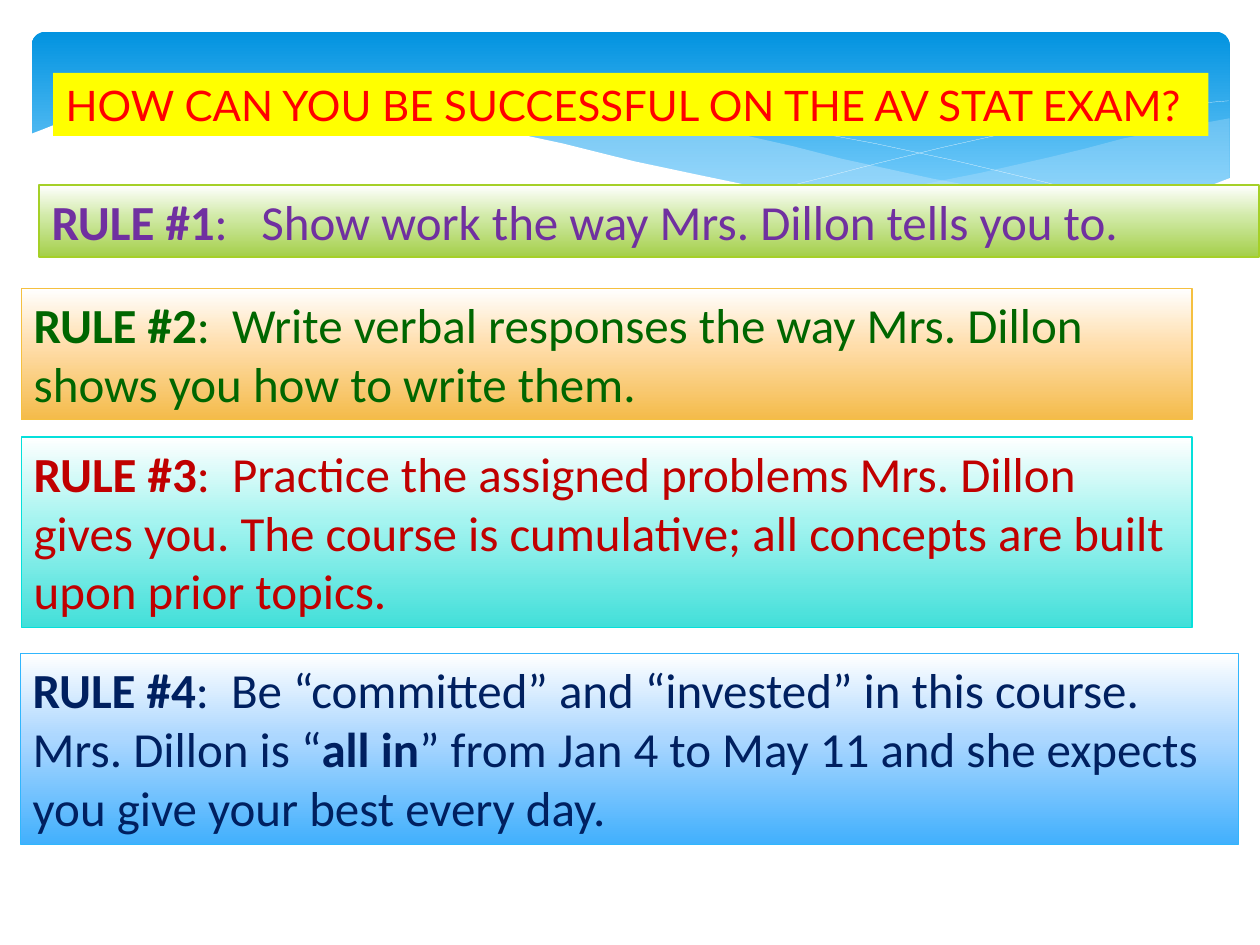
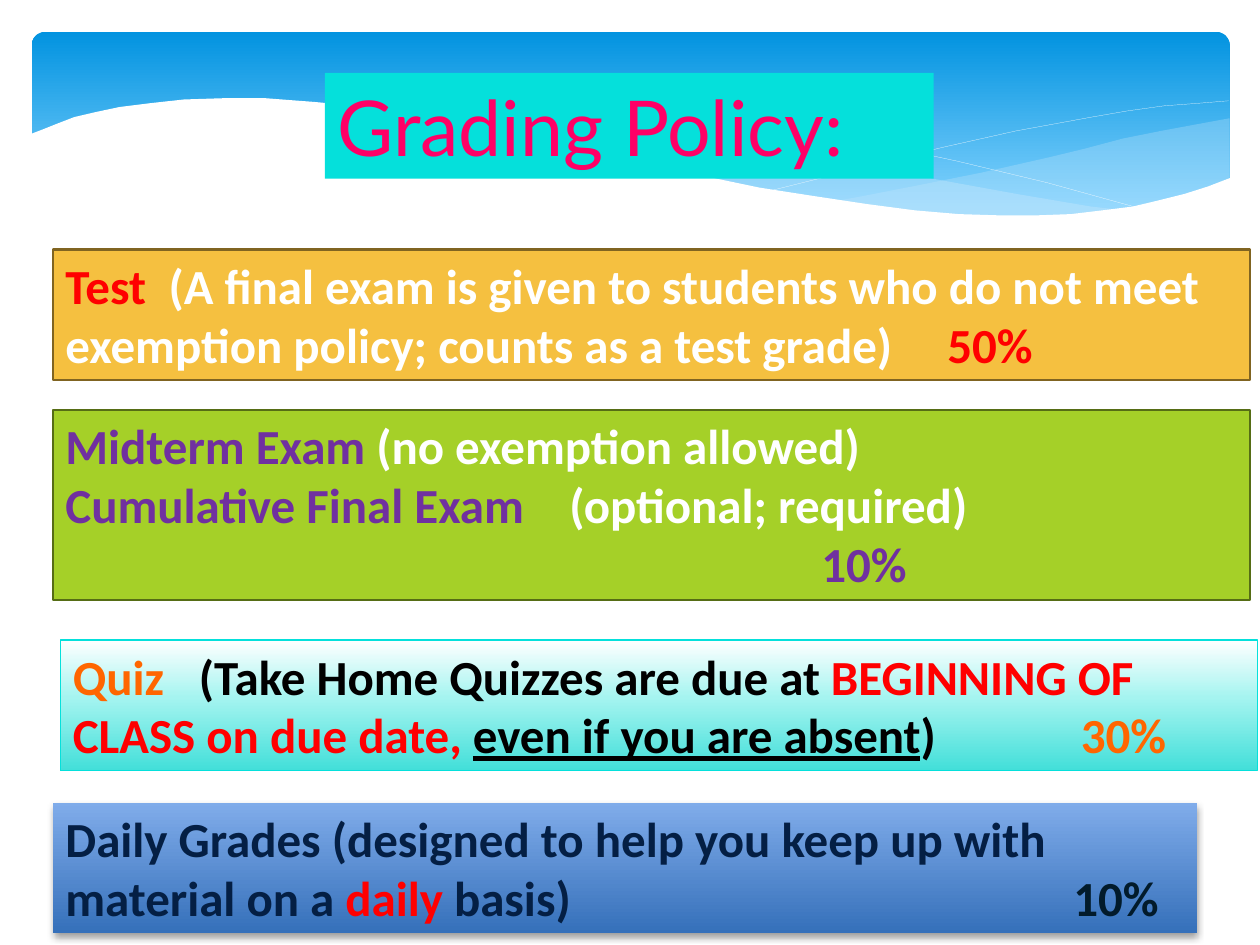
import copy

from lxml import etree
from pptx import Presentation
from pptx import util as u
from pptx.dml.color import RGBColor
from pptx.enum import shapes, text
from pptx.oxml import ns

WHITE = RGBColor(0xFF, 0xFF, 0xFF)
BLACK = RGBColor(0x00, 0x00, 0x00)
RED = RGBColor(0xFF, 0x00, 0x00)
DARK_RED = RGBColor(0xC0, 0x00, 0x00)
PINK = RGBColor(0xFF, 0x00, 0x66)
ORANGE = RGBColor(0xFF, 0x66, 0x00)
YELLOW = RGBColor(0xFF, 0xFF, 0x00)
PURPLE = RGBColor(0x70, 0x30, 0xA0)
DARK_GREEN = RGBColor(0x00, 0x66, 0x00)
NAVY = RGBColor(0x00, 0x20, 0x60)
DEEP_BLUE = RGBColor(0x04, 0x1F, 0x44)
INK = RGBColor(0x02, 0x1B, 0x2B)
LIME = RGBColor(0xA5, 0xD0, 0x28)
OLIVE = RGBColor(0x56, 0x6D, 0x15)
GOLD = RGBColor(0xF5, 0xC0, 0x40)
BROWN = RGBColor(0x80, 0x64, 0x21)
TURQUOISE = RGBColor(0x05, 0xE0, 0xDB)
SKY = RGBColor(0x31, 0xB6, 0xFD)
PALE_BLUE = RGBColor(0xC6, 0xE7, 0xFC)

# Gradients run from top to bottom: (position, colour)
BAND_GRADIENT = [(0, RGBColor(0x02, 0x93, 0xE0)), (0.9, RGBColor(0x83, 0xD3, 0xFE))]
LIME_GRADIENT = [(0, WHITE), (0.44, RGBColor(0xD1, 0xEA, 0xA7)), (1, RGBColor(0xA4, 0xCF, 0x4A))]
GOLD_GRADIENT = [(0, WHITE), (0.44, RGBColor(0xFF, 0xDD, 0xAA)), (1, RGBColor(0xF4, 0xBB, 0x4A))]
TURQUOISE_GRADIENT = [(0, WHITE), (0.44, RGBColor(0xA5, 0xF4, 0xF0)), (1, RGBColor(0x42, 0xDF, 0xD9))]
SKY_GRADIENT = [(0, WHITE), (0.44, RGBColor(0xAC, 0xD7, 0xFF)), (1, RGBColor(0x42, 0xB0, 0xFD))]
BLUE_GRADIENT = [(0, RGBColor(0x80, 0xAC, 0xEA)), (1, RGBColor(0x35, 0x70, 0xBA))]

BODY_FONT, TITLE_FONT = "Calibri", "Lato"
BODY_SIZE = u.Pt(28)

# Wave outlines, in hundredths of an inch
WAVE_UNIT = u.Cm(2.54) // 100
RIGHT_WAVE = [
    (975, 94), (948, 99), (921, 104), (891, 110), (861, 118), (832, 125), (779, 137),
    (729, 147), (683, 156), (661, 160), (691, 164), (719, 167), (745, 169), (769, 171),
    (792, 172), (835, 172), (863, 170), (889, 166), (913, 162), (935, 156), (963, 147),
    (976, 141), (976, 94)]
MIDDLE_WAVE = [
    (893, 167), (866, 164), (807, 154), (741, 142), (668, 126), (629, 116), (598, 109),
    (569, 102), (541, 97), (514, 92), (489, 89), (442, 83), (399, 80), (361, 80),
    (328, 81), (299, 84), (286, 86), (323, 90), (362, 97), (404, 106), (449, 116),
    (530, 135), (584, 146), (634, 156), (680, 163), (722, 168), (761, 171), (796, 173),
    (838, 172), (867, 170)]
FALLING_LINE = [
    (309, 90), (328, 86), (353, 84), (387, 82), (416, 81), (450, 82), (489, 84),
    (533, 88), (582, 94), (636, 103), (695, 114), (760, 128), (831, 145), (907, 166)]
RISING_LINE = [
    (613, 151), (653, 141), (695, 130), (748, 117), (806, 104), (866, 93), (895, 88),
    (924, 84), (951, 82), (975, 80)]
WHITE_WAVE = [
    (977, 141), (959, 148), (940, 154), (920, 159), (899, 164), (875, 167), (850, 170),
    (823, 171), (793, 171), (761, 170), (726, 167), (688, 162), (648, 156), (603, 149),
    (555, 139), (503, 128), (447, 114), (391, 102), (340, 92), (292, 85), (250, 81),
    (211, 78), (177, 78), (146, 79), (119, 82), (95, 85), (76, 89), (59, 93), (46, 98),
    (36, 102), (23, 107), (23, 224), (977, 224)]

# points, fill colour (None for an open line), opacity in percent
WAVES = [
    (RIGHT_WAVE, PALE_BLUE, 29),
    (MIDDLE_WAVE, PALE_BLUE, 40),
    (FALLING_LINE, None, 100),
    (RISING_LINE, None, 100),
    (WHITE_WAVE, WHITE, 100)]

# Box: position in cm, fill, outline (colour, points), tab stops in cm,
# paragraphs of runs (text, colour, style letters: b bold, u underlined)
RULE_BOXES = [
    ((0.79, 3.73, 24.59, 1.45), LIME_GRADIENT, (LIME, 0.75), [4.23], [
        [("RULE #1", PURPLE, "b"),
         (":\tShow work the way Mrs. Dillon tells you to.", PURPLE, "")]]),
    ((0.43, 5.82, 23.6, 2.64), GOLD_GRADIENT, (GOLD, 0.75), [4], [
        [("RULE #2", DARK_GREEN, "b"),
         (":\tWrite verbal responses the way Mrs. Dillon shows you how to write them.",
          DARK_GREEN, "")]]),
    ((0.43, 8.81, 23.6, 3.84), TURQUOISE_GRADIENT, (TURQUOISE, 0.75), [4], [
        [("RULE #3", DARK_RED, "b"),
         (":\tPractice the assigned problems Mrs. Dillon gives you. The course is "
          "cumulative; all concepts are built upon prior topics.", DARK_RED, "")]]),
    ((0.41, 13.18, 24.56, 3.84), SKY_GRADIENT, (SKY, 0.75), [4], [
        [("RULE #4", NAVY, "b"),
         (":\tBe “committed” and “invested” in this course. Mrs. Dillon is “", NAVY, ""),
         ("all in", NAVY, "b"),
         ("” from Jan 4 to May 11 and she expects you give your best every day.",
          NAVY, "")]])]

GRADE_BOXES = [
    ((1.07, 5.03, 24.13, 2.64), GOLD, (BROWN, 1.25), [2.08, 17.78], [
        [("Test", RED, "b"),
         ("\t(A final exam is given to students who do not meet exemption policy; "
          "counts as a test grade)\t", WHITE, "b"),
         ("50%", RED, "b")]]),
    ((1.07, 8.26, 24.13, 3.84), LIME, (OLIVE, 1.25), [10.16, 15.24], [
        [("Midterm Exam ", PURPLE, "b"), ("(no exemption allowed)", WHITE, "b")],
        [("Cumulative Final Exam", PURPLE, "b"),
         ("\t(optional; required)", WHITE, "b")],
        [("\t\t10%", PURPLE, "b")]]),
    ((1.22, 12.9, 24.13, 2.64), TURQUOISE_GRADIENT, (TURQUOISE, 0.75), [2.54, 20.32], [
        [("Quiz", ORANGE, "b"),
         ("\t(Take Home Quizzes are due at ", BLACK, "b"),
         ("BEGINNING OF CLASS on due date, ", RED, "b"),
         ("even if you are absent", BLACK, "bu"),
         (")\t", BLACK, "b"),
         ("30%", ORANGE, "b")]]),
    ((1.07, 16.18, 23.06, 2.64), BLUE_GRADIENT, None, [20.32], [
        [("Daily Grades (designed to help you keep up with material on a ",
          DEEP_BLUE, "b"),
         ("daily", RED, "b"),
         (" basis)\t", DEEP_BLUE, "b"),
         ("10%", INK, "b")]])]

# title, position in cm, fill, text colour, points, boxes
SLIDES = [
    ("HOW CAN YOU BE SUCCESSFUL ON THE AV STAT EXAM?", (1.07, 1.47, 23.29, 1.27),
     YELLOW, RED, 24, RULE_BOXES),
    ("Grading Policy:", (6.55, 1.47, 12.27, 2.13),
     TURQUOISE, PINK, 44, GRADE_BOXES)]


def paint(shape, fill):
    """Fill with one colour, or top to bottom with a list of gradient stops."""
    if isinstance(fill, RGBColor):
        shape.fill.solid()
        shape.fill.fore_color.rgb = fill
        return
    shape.fill.gradient()
    shape.fill.gradient_angle = 270
    stop_list = shape.element.xpath(".//a:gsLst")[0]
    while len(stop_list) < len(fill):
        stop_list.append(copy.deepcopy(stop_list[-1]))
    for stop, (position, color) in zip(shape.fill.gradient_stops, fill):
        stop.position = position
        stop.color.rgb = color


def add_run(paragraph, words, font, size, color, style=""):
    run = paragraph.add_run()
    run.text = words
    run.font.name = font
    run.font.size = size
    run.font.color.rgb = color
    run.font.bold = "b" in style
    run.font.underline = "u" in style


presentation = Presentation()
presentation.slide_width = u.Cm(25.4)
presentation.slide_height = u.Cm(19.05)
layout = presentation.slide_layouts[5]
slides = [presentation.slides.add_slide(layout) for _ in SLIDES]

# The blue wave band is drawn once and moved to the shared layout
canvas = slides[0].shapes
band = canvas.add_shape(shapes.MSO_SHAPE.ROUNDED_RECTANGLE,
                        u.Cm(0.64), u.Cm(0.64), u.Cm(24.15), u.Cm(3.96))
band.adjustments[0] = 0.07
paint(band, BAND_GRADIENT)
band.line.fill.background()
band_parts = [band]
for points, color, opacity in WAVES:
    builder = canvas.build_freeform(*points[0], scale=WAVE_UNIT)
    builder.add_line_segments(points[1:], close=color is not None)
    wave = builder.convert_to_shape()
    if color is None:
        wave.fill.background()
        wave.line.color.rgb = WHITE
        wave.line.width = u.Pt(0.1)
    else:
        paint(wave, color)
        wave.line.fill.background()
        if opacity < 100:
            fill_color = wave.element.xpath("./p:spPr/a:solidFill/a:srgbClr")[0]
            etree.SubElement(fill_color, ns.qn("a:alpha"), val=str(opacity * 1000))
    band_parts.append(wave)
for number, part in enumerate(band_parts, start=100):
    part.shadow.inherit = False
    part.element.xpath("./p:nvSpPr/p:cNvPr")[0].set("id", str(number))
    layout.shapes.element.append(part.element)

for slide, (heading, place, fill, color, points, boxes) in zip(slides, SLIDES):
    title = slide.shapes.title
    title.left, title.top, title.width, title.height = map(u.Cm, place)
    paint(title, fill)
    frame = title.text_frame
    frame.word_wrap = True
    frame.auto_size = text.MSO_AUTO_SIZE.NONE
    frame.vertical_anchor = text.MSO_ANCHOR.TOP
    frame.paragraphs[0].alignment = text.PP_ALIGN.LEFT
    add_run(frame.paragraphs[0], heading, TITLE_FONT, u.Pt(points), color)

    for place, fill, outline, tab_stops, paragraphs in boxes:
        box = slide.shapes.add_shape(shapes.MSO_SHAPE.RECTANGLE, *map(u.Cm, place))
        paint(box, fill)
        box.shadow.inherit = False
        if outline:
            box.line.color.rgb = outline[0]
            box.line.width = u.Pt(outline[1])
        else:
            box.line.fill.background()
            effects = box.element.xpath("./p:spPr/a:effectLst")[0]
            shadow = etree.SubElement(
                effects, ns.qn("a:outerShdw"), blurRad=str(u.Pt(4)),
                dist=str(u.Pt(2)), dir="5400000", rotWithShape="0")
            shade = etree.SubElement(shadow, ns.qn("a:srgbClr"), val=str(BLACK))
            etree.SubElement(shade, ns.qn("a:alpha"), val="38000")

        frame = box.text_frame
        frame.word_wrap = True
        frame.auto_size = text.MSO_AUTO_SIZE.SHAPE_TO_FIT_TEXT
        frame.vertical_anchor = text.MSO_ANCHOR.TOP
        for index, runs in enumerate(paragraphs):
            paragraph = frame.add_paragraph() if index else frame.paragraphs[0]
            paragraph.alignment = text.PP_ALIGN.LEFT
            properties = paragraph._p.get_or_add_pPr()
            tab_list = etree.SubElement(properties, ns.qn("a:tabLst"))
            for stop in tab_stops:
                etree.SubElement(tab_list, ns.qn("a:tab"), pos=str(u.Cm(stop)), algn="l")
            for words, run_color, style in runs:
                add_run(paragraph, words, BODY_FONT, BODY_SIZE, run_color, style)

presentation.save("out.pptx")
